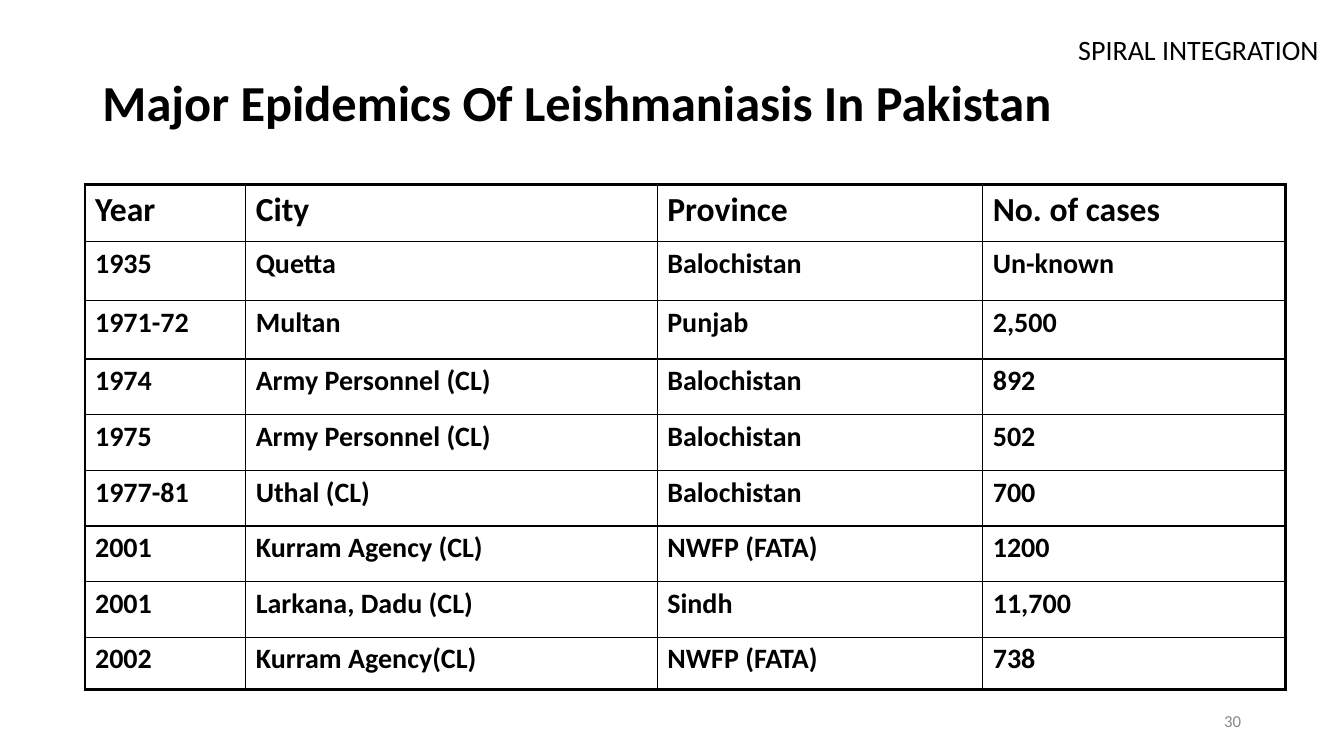
from lxml.etree import SubElement as Sub
from pptx import Presentation
from pptx.dml.color import RGBColor as Rgb
from pptx.enum.text import MSO_ANCHOR as Anchor, PP_ALIGN as Align
from pptx.oxml.ns import qn
from pptx.util import Pt

PX = 9525
INK = "000000"
GREY = "888888"
HEADS = ["Year", "City", "Province", "No. of cases"]
CASES = [
    ["1935", "Quetta", "Balochistan", "Un-known"],
    ["1971-72", "Multan", "Punjab", "2,500"],
    ["1974", "Army Personnel (CL)", "Balochistan", "892"],
    ["1975", "Army Personnel (CL)", "Balochistan", "502"],
    ["1977-81", "Uthal (CL)", "Balochistan", "700"],
    ["2001", "Kurram Agency (CL)", "NWFP (FATA)", "1200"],
    ["2001", "Larkana, Dadu (CL)", "Sindh", "11,700"],
    ["2002", "Kurram Agency(CL)", "NWFP (FATA)", "738"],
]
WIDTHS = [153, 392, 310, 288]
HEIGHTS = [54, 56, 56] + [53] * 5 + [50]


def scale(*nums):
    return [num * PX for num in nums]


def color(text):
    return Rgb.from_string(text)


def style(frame, size, tint=INK, bold=False, align=Align.LEFT):
    for para in frame.paragraphs:
        para.alignment = align
        for run in para.runs:
            run.font.name = "Calibri"
            run.font.size = Pt(size)
            run.font.bold = bold
            run.font.color.rgb = color(tint)


def add_title(slide, box, text):
    title = slide.shapes.title
    title.left, title.top, title.width, title.height = scale(*box)
    frame = title.text_frame
    frame.text = text
    frame.vertical_anchor = Anchor.MIDDLE
    frame.paragraphs[0].line_spacing = 0.9
    style(frame, 36, bold=True)


def add_label(slide, box, text, size, tint, pads, anchor):
    frame = slide.shapes.add_textbox(*scale(*box)).text_frame
    frame.word_wrap = True
    frame.vertical_anchor = anchor
    frame.margin_left = frame.margin_right = pads[0] * PX
    frame.margin_top, frame.margin_bottom = scale(*pads[1:])
    frame.text = text
    style(frame, size, tint, align=Align.RIGHT)


def add_edge(cell, side, width):
    line = Sub(cell._tc.get_or_add_tcPr(), qn(f"a:ln{side}"), w=str(Pt(width)))
    fill = Sub(line, qn("a:solidFill"))
    Sub(fill, qn("a:srgbClr"), val=INK)


def add_cases(slide, box, rows):
    shape = slide.shapes.add_table(len(rows), len(WIDTHS), *scale(*box))
    table = shape.table
    table.first_row = table.horz_banding = False
    for col, width in zip(table.columns, WIDTHS):
        col.width = width * PX
    for row, height in zip(table.rows, HEIGHTS):
        row.height = height * PX
    for r, row in enumerate(rows):
        for c, text in enumerate(row):
            cell = table.cell(r, c)
            cell.text = text
            style(cell.text_frame, 20 if r else 24, bold=True)
            outer = {"L": c == 0, "R": c == len(row) - 1,
                     "T": r == 0, "B": r == len(rows) - 1}
            for side, thick in outer.items():
                add_edge(cell, side, 2.25 if thick else 1)
            cell.fill.background()


def main():
    deck = Presentation()
    deck.slide_width, deck.slide_height = scale(1280, 720)
    slide = deck.slides.add_slide(deck.slide_layouts[5])
    add_title(slide, (88, 31, 1104, 139),
              "Major Epidemics Of Leishmaniasis In Pakistan")
    add_label(slide, (904, 667, 288, 38), "30", 12, GREY,
              (10, 5, 5), Anchor.MIDDLE)
    add_label(slide, (848, 30, 408, 34), "SPIRAL INTEGRATION", 20, INK,
              (0, 1, 0), Anchor.TOP)
    add_cases(slide, (81, 176, sum(WIDTHS), sum(HEIGHTS)), [HEADS] + CASES)
    deck.save("out.pptx")


if __name__ == "__main__":
    main()
